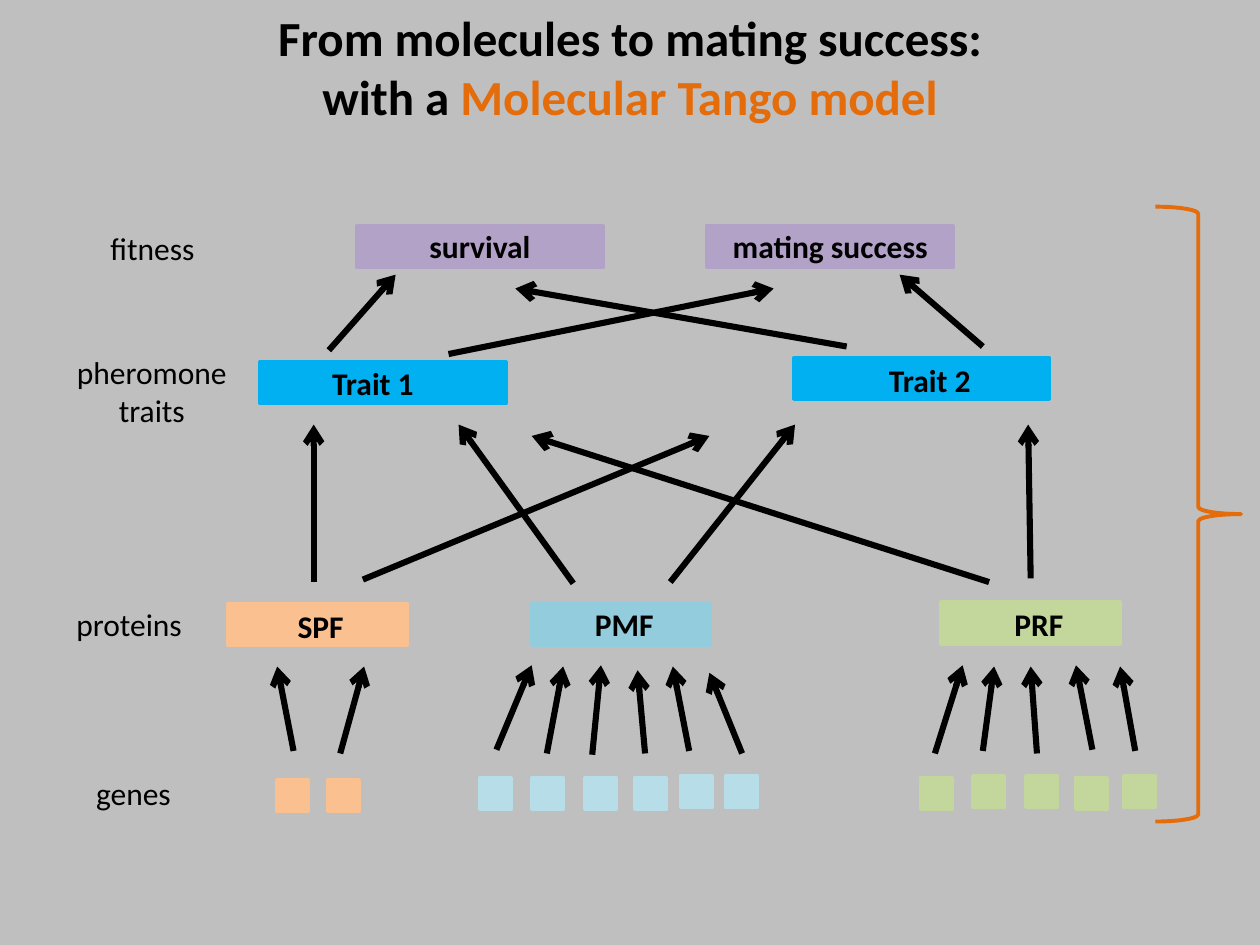
from copy import deepcopy
from dataclasses import dataclass

from lxml.etree import SubElement
from pptx import Presentation
from pptx.dml.color import RGBColor
from pptx.enum.shapes import MSO_CONNECTOR, MSO_SHAPE
from pptx.enum.text import MSO_ANCHOR, MSO_AUTO_SIZE, PP_ALIGN
from pptx.oxml.ns import qn
from pptx.util import Emu, Pt


@dataclass(frozen=True)
class Theme:
    """Colours, font and sizes of the slide."""
    font: str = "Calibri"
    background: str = "BFBFBF"
    ink: str = "000000"
    accent: str = "E46C0A"
    fitness: str = "B3A2C7"
    trait: str = "00B0F0"
    spf: str = "FAC090"
    pmf: str = "93CDDD"
    pmf_gene: str = "B7DEE8"
    prf: str = "C3D69B"
    title_size: float = 28
    body_size: float = 18
    box_line: float = 2
    brace_line: float = 2.25
    arrow_line: float = 3.5


def px(n):
    """Turn px, at 100 to the inch, into EMU."""
    return Emu(n * 9144)


class Builder:
    """Draws styled elements on the current slide."""

    def __init__(self, prs, theme):
        self.theme = theme
        self.s = prs.slides.add_slide(prs.slide_layouts[5])
        fill = self.s.background.fill
        fill.solid()
        fill.fore_color.rgb = RGBColor.from_string(theme.background)

    def run(self, p, text, size, color, bold):
        """Add one formatted run."""
        r = p.add_run()
        r.text = text
        r.font.name = self.theme.font
        r.font.size = Pt(size)
        r.font.bold = bold
        r.font.color.rgb = RGBColor.from_string(color)
        return r

    def title(self, x, y, w, h, first, second, accent):
        """Place the two-line title with an accented ending."""
        t = self.theme
        sp = self.s.shapes.title
        sp.left, sp.top, sp.width, sp.height = map(px, (x, y, w, h))
        tf = sp.text_frame
        tf.auto_size = MSO_AUTO_SIZE.NONE
        tf.vertical_anchor = MSO_ANCHOR.MIDDLE
        p = tf.paragraphs[0]
        p.alignment = PP_ALIGN.CENTER
        r = self.run(p, first, t.title_size, t.ink, True)
        p.add_line_break()
        p._p.find(qn("a:br")).append(deepcopy(r._r.rPr))
        self.run(p, second, t.title_size, t.ink, True)
        self.run(p, accent, t.title_size, t.accent, True)

    def box(self, x, y, w, h, color, text=None):
        """Draw a filled rectangle, with centred bold text if given."""
        t = self.theme
        sp = self.s.shapes.add_shape(MSO_SHAPE.RECTANGLE, *map(px, (x, y, w, h)))
        sp.shadow.inherit = False
        sp.fill.solid()
        sp.fill.fore_color.rgb = RGBColor.from_string(color)
        sp.line.color.rgb = RGBColor.from_string(color)
        sp.line.width = Pt(t.box_line)
        if text:
            tf = sp.text_frame
            tf.vertical_anchor = MSO_ANCHOR.MIDDLE
            p = tf.paragraphs[0]
            p.alignment = PP_ALIGN.CENTER
            self.run(p, text, t.body_size, t.ink, True)

    def label(self, x, y, w, h, *lines, bold=False):
        """Write a label, one centred paragraph a line."""
        t = self.theme
        tf = self.s.shapes.add_textbox(*map(px, (x, y, w, h))).text_frame
        tf.word_wrap = False
        for i, line in enumerate(lines):
            p = tf.add_paragraph() if i else tf.paragraphs[0]
            p.alignment = PP_ALIGN.CENTER
            self.run(p, line, t.body_size, t.ink, bold)

    def arrow(self, x1, y1, x2, y2):
        """Draw an arrow pointing at the second point."""
        c = self.s.shapes.add_connector(MSO_CONNECTOR.STRAIGHT, *map(px, (x1, y1, x2, y2)))
        c.line.color.rgb = RGBColor.from_string(self.theme.ink)
        c.line.width = Pt(self.theme.arrow_line)
        SubElement(c.line._get_or_add_ln(), qn("a:tailEnd"), type="arrow")
        SubElement(c._element.spPr, qn("a:effectLst"))

    def brace(self, x, y, w, h):
        """Draw the closing brace."""
        sp = self.s.shapes.add_shape(MSO_SHAPE.RIGHT_BRACE, *map(px, (x, y, w, h)))
        sp.shadow.inherit = False
        sp.fill.background()
        sp.line.color.rgb = RGBColor.from_string(self.theme.accent)
        sp.line.width = Pt(self.theme.brace_line)


def main():
    """Build the slide and save it."""
    prs = Presentation()
    prs.slide_width, prs.slide_height = px(1000), px(750)
    t = Theme()
    b = Builder(prs, t)
    b.title(50, 30, 900, 45, "From molecules to mating success:", "with a ",
            "Molecular Tango model")

    genes = (
        (t.spf, ((220, 619), (260, 619))),
        (t.pmf_gene, ((381, 617), (422, 617), (464, 617), (504, 617), (540, 616), (576, 616))),
        (t.prf, ((731, 617), (772, 616), (814, 616), (854, 617), (892, 616))),
    )
    for color, spots in genes:
        for x, y in spots:
            b.box(x, y, 25, 25, color)

    for x, y, color in ((181, 479, t.spf), (422, 479, t.pmf), (747, 478, t.prf)):
        b.box(x, y, 142, 33, color)
    b.box(206, 287, 196, 33, t.trait)
    b.box(630, 284, 203, 33, t.trait)
    for x, text in ((283, "survival"), (561, "mating success")):
        b.box(x, 179, 196, 33, t.fitness, text)

    gene_arrows = (
        (233, 596, 220, 529), (270, 598, 289, 529),
        (394, 595, 422, 528), (434, 598, 447, 529), (470, 599, 477, 528),
        (512, 598, 506, 532), (547, 596, 534, 529), (589, 598, 563, 534),
        (742, 598, 764, 528), (780, 596, 789, 529), (823, 598, 818, 529),
        (867, 595, 854, 528), (901, 596, 889, 529),
    )
    protein_arrows = (
        (249, 462, 249, 337), (288, 460, 563, 346), (455, 463, 364, 337),
        (532, 462, 631, 337), (785, 462, 422, 346), (818, 459, 816, 337),
    )
    trait_arrows = (
        (356, 281, 614, 229), (261, 278, 314, 218),
        (672, 275, 409, 229), (780, 275, 714, 218),
    )
    for ends in gene_arrows + protein_arrows + trait_arrows:
        b.arrow(*ends)

    for x, y, w, text in ((226, 477, 57, "SPF"), (462, 475, 67, "PMF"), (795, 475, 59, "PRF"),
                          (253, 284, 86, "Trait 1"), (695, 282, 86, "Trait 2")):
        b.label(x, y, w, 40, text, bold=True)

    b.label(77, 177, 88, 40, "fitness")
    b.label(50, 275, 141, 71, "pheromone", "traits")
    b.label(50, 475, 105, 40, "proteins")
    b.label(66, 609, 80, 40, "genes")
    b.brace(917, 164, 68, 488)
    prs.save("out.pptx")


if __name__ == "__main__":
    main()
